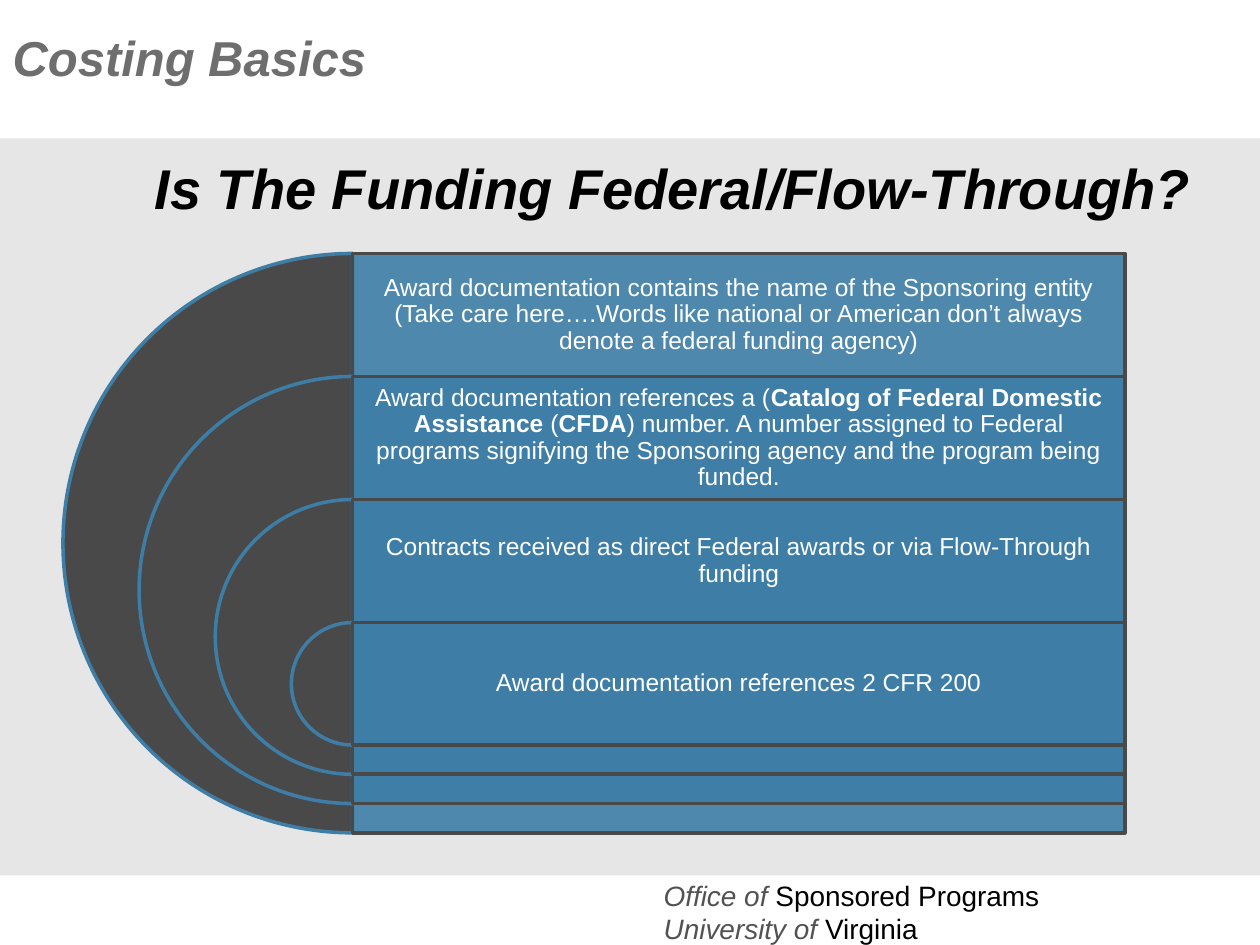
import pptx
import pptx.dml.color
import pptx.enum.shapes
import pptx.enum.text
import pptx.oxml
import pptx.oxml.ns
import pptx.util

Cm = pptx.util.Cm
Pt = pptx.util.Pt
SHAPE = pptx.enum.shapes.MSO_SHAPE
ALIGN = pptx.enum.text.PP_ALIGN
ANCHOR = pptx.enum.text.MSO_ANCHOR

DARK, BLUE, BAND, BLACK, WHITE = "494949", "3E7EA6", "E6E6E6", "000000", "FFFFFF"
TITLE_GREY, FOOTER_GREY = "6E6E6E", "525252"

# Nested half circles (cm)
CENTRE_X, TOP, ROW_H = 7.11, 5.11, 2.48
BAR_W, OUTER, SHRINK = 15.57, 11.68, 3.07

# Each row is a list of (text, bold) runs
ROWS = [
    [("Award documentation contains the name of the Sponsoring entity (Take care "
      "here….Words like national or American don’t always denote a federal "
      "funding agency)", False)],
    [("Award documentation references a (", False),
     ("Catalog of Federal Domestic Assistance", True),
     (" (", False),
     ("CFDA", True),
     (") number. A number assigned to Federal programs signifying the Sponsoring "
      "agency and the program being funded.", False)],
    [("Contracts received as direct Federal awards or via Flow-Through funding", False)],
    [("Award documentation references 2 CFR 200", False)],
]
FOOTER = [("Office of ", "Sponsored Programs"), ("University of ", "Virginia")]


def rgb(color):
    return pptx.dml.color.RGBColor.from_string(color)


def add_run(p, text, size, color, bold=False, italic=False):
    r = p.add_run()
    r.text = text
    r.font.name = "Arial"
    r.font.size = Pt(size)
    r.font.color.rgb = rgb(color)
    r.font.bold = bold
    r.font.italic = italic


def add_filled(s, kind, x, y, w, h, fill, line=None):
    sp = s.shapes.add_shape(kind, Cm(x), Cm(y), Cm(w), Cm(h))
    sp.shadow.inherit = False
    sp.fill.solid()
    sp.fill.fore_color.rgb = rgb(fill)
    if line:
        sp.line.color.rgb = rgb(line)
        sp.line.width = Pt(2)
    else:
        sp.line.fill.background()
    return sp


def set_opacity(sp, percent):
    color = sp.fill._xPr.find(".//" + pptx.oxml.ns.qn("a:srgbClr"))
    alpha = pptx.oxml.parse_xml(
        f'<a:alpha {pptx.oxml.ns.nsdecls("a")} val="{percent * 1000}"/>')
    color.append(alpha)


def add_textbox(s, x, y, w, h):
    tf = s.shapes.add_textbox(Cm(x), Cm(y), Cm(w), Cm(h)).text_frame
    tf.word_wrap = True
    return tf


def add_row(s, i, runs):
    """Draw one half circle, its bar down to the circle's foot, and the text."""
    d = OUTER - i * SHRINK
    y = TOP + i * ROW_H
    pie = add_filled(s, SHAPE.PIE, CENTRE_X - d / 2, y, d, d, DARK, BLUE)
    pie.adjustments[0] = 54
    pie.adjustments[1] = 162
    bar = add_filled(s, SHAPE.RECTANGLE, CENTRE_X, y, BAR_W, d, BLUE, DARK)
    set_opacity(bar, 90)

    tf = add_textbox(s, CENTRE_X, y, BAR_W, ROW_H)
    tf.vertical_anchor = ANCHOR.MIDDLE
    tf.margin_left = tf.margin_right = tf.margin_top = tf.margin_bottom = Cm(0.15)
    p = tf.paragraphs[0]
    p.alignment = ALIGN.CENTER
    p.line_spacing = 0.9
    for text, bold in runs:
        add_run(p, text, 14, WHITE, bold)


def set_title(s, text):
    title = s.shapes.title
    title.left, title.top, title.width, title.height = Cm(0), Cm(0.43), Cm(23.7), Cm(1.45)
    tf = title.text_frame
    tf.auto_size = pptx.enum.text.MSO_AUTO_SIZE.NONE
    tf.vertical_anchor = ANCHOR.TOP
    p = tf.paragraphs[0]
    p.alignment = ALIGN.LEFT
    add_run(p, text, 28, TITLE_GREY, bold=True, italic=True)


def add_heading(s, text):
    p = add_textbox(s, 2.46, 2.97, 22.23, 1.6).paragraphs[0]
    p.alignment = ALIGN.CENTER
    add_run(p, text, 32, BLACK, bold=True, italic=True)


def add_footer(s):
    tf = add_textbox(s, 13.13, 17.58, 10.16, 1.63)
    for i, (lead, name) in enumerate(FOOTER):
        p = tf.add_paragraph() if i else tf.paragraphs[0]
        add_run(p, lead, 16, FOOTER_GREY, italic=True)
        add_run(p, name, 16, BLACK)


def main():
    prs = pptx.Presentation()
    prs.slide_width, prs.slide_height = Cm(25.4), Cm(19.05)
    s = prs.slides.add_slide(prs.slide_layouts.get_by_name("Title Only"))
    set_title(s, "Costing Basics")
    add_filled(s, SHAPE.RECTANGLE, 0, 2.79, 25.4, 14.86, BAND)
    add_footer(s)
    for i, runs in enumerate(ROWS):
        add_row(s, i, runs)
    add_heading(s, "Is The Funding Federal/Flow-Through?")
    prs.save("out.pptx")


if __name__ == "__main__":
    main()
